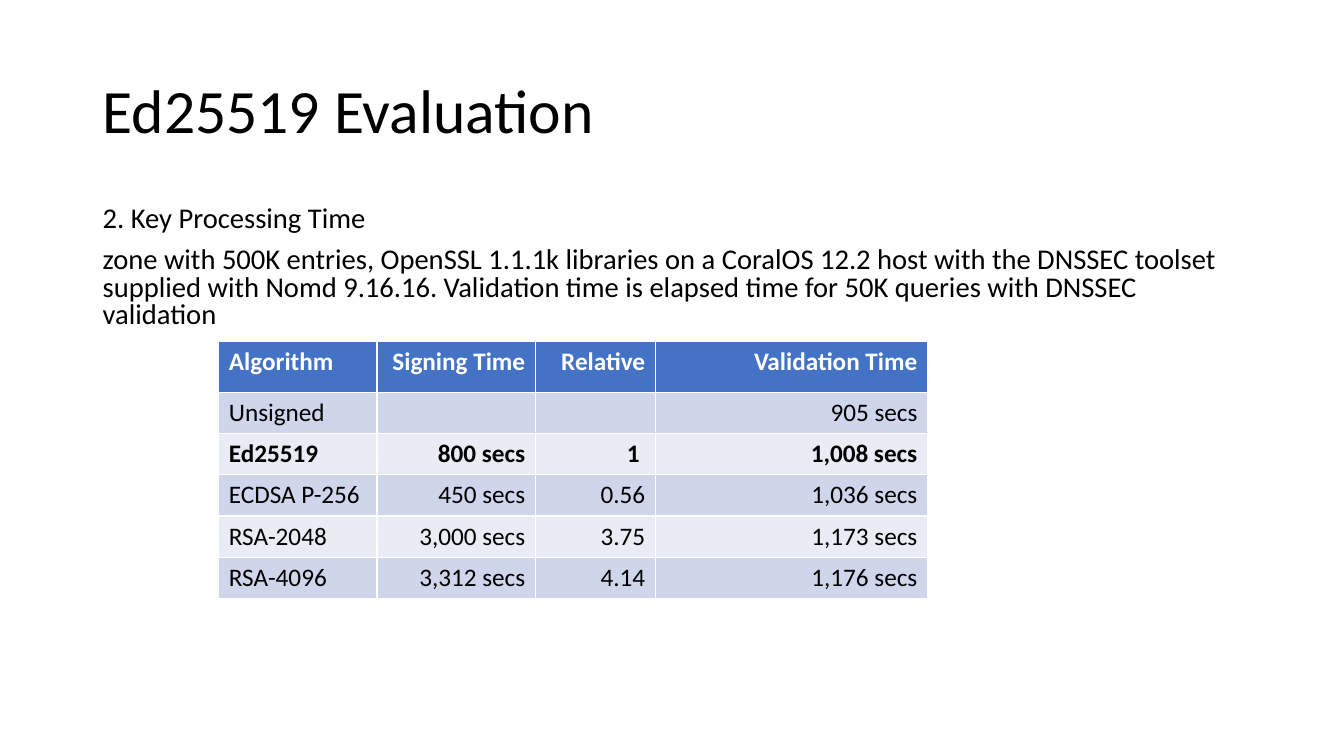
from pptx import Presentation
from pptx import util as u
from pptx.dml.color import RGBColor
from pptx.enum import text

PX = 9144  # EMU in one px, at 100 px to the inch
FONT = "Calibri"
BLACK, WHITE = "000000", "FFFFFF"
HEADER, BAND_DARK, BAND_LIGHT = "4472C4", "CFD5EA", "E9EBF5"


def set_font(para, size, color, bold=False):
    para.font.name = FONT
    para.font.size = u.Pt(size)
    para.font.bold = bold
    para.font.color.rgb = RGBColor.from_string(color)


def add_text(page, bounds, lines, size, spacing, before, anchor):
    """Add a wrapping text box with one paragraph for each line."""
    frame = page.shapes.add_textbox(*(n * PX for n in bounds)).text_frame
    frame.word_wrap = True
    frame.vertical_anchor = anchor
    frame.text = "\n".join(lines)
    for para in frame.paragraphs:
        para.line_spacing = spacing
        para.space_before = u.Pt(before)
        set_font(para, size, BLACK)


deck = Presentation()
deck.slide_width, deck.slide_height = 1333 * PX, 750 * PX
page = deck.slides.add_slide(deck.slide_layouts[6])

add_text(page, (92, 40, 1150, 145), ["Ed25519 Evaluation"],
         44, 0.9, 0, text.MSO_ANCHOR.MIDDLE)
add_text(page, (92, 200, 1150, 124), [
    "2. Key Processing Time",
    "zone with 500K entries, OpenSSL 1.1.1k libraries on a CoralOS 12.2 host "
    "with the DNSSEC toolset supplied with Nomd 9.16.16. Validation time is "
    "elapsed time for 50K queries with DNSSEC validation",
], 20.4, 0.8, 10, text.MSO_ANCHOR.TOP)

timings = [
    ("Algorithm", "Signing Time", "Relative", "Validation Time"),
    ("Unsigned", "", "", "905 secs"),
    ("Ed25519", "800 secs", "1 ", "1,008 secs"),
    ("ECDSA P-256", "450 secs", "0.56", "1,036 secs"),
    ("RSA-2048", "3,000 secs", "3.75", "1,173 secs"),
    ("RSA-4096", "3,312 secs", "4.14", "1,176 secs"),
]
widths = [157, 157, 119, 270]
heights = [50] + [41] * 5

# The default table style supplies the white borders and header rule.
table = page.shapes.add_table(
    len(timings), len(widths), 217 * PX, 339 * PX,
    sum(widths) * PX, sum(heights) * PX).table
for column, width in zip(table.columns, widths):
    column.width = width * PX

for r, values in enumerate(timings):
    table.rows[r].height = heights[r] * PX
    fill = HEADER if r == 0 else BAND_DARK if r % 2 else BAND_LIGHT
    for c, value in enumerate(values):
        cell = table.cell(r, c)
        cell.fill.solid()
        cell.fill.fore_color.rgb = RGBColor.from_string(fill)
        cell.text = value
        para = cell.text_frame.paragraphs[0]
        para.alignment = text.PP_ALIGN.RIGHT if c else text.PP_ALIGN.LEFT
        set_font(para, 18, BLACK if r else WHITE,
                 bold=r == 0 or values[0] == "Ed25519")

deck.save("out.pptx")
